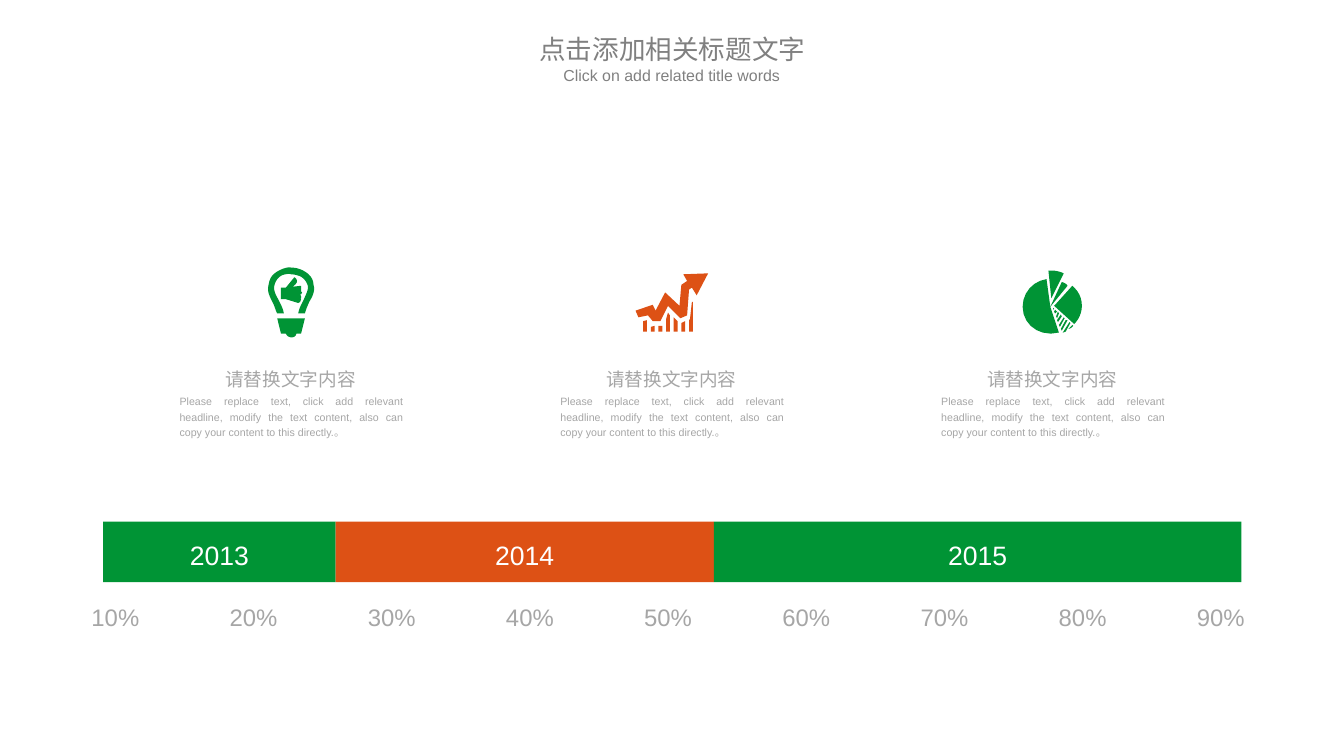
"""Build a timeline slide with three icon captions, a year bar and a percent scale."""
import pptx
import pptx.dml.color
import pptx.enum.shapes
import pptx.enum.text
import pptx.oxml.ns
import pptx.util
import lxml.etree

Pt = pptx.util.Pt
ALIGN = pptx.enum.text.PP_ALIGN
COLOURS = {"green": "009435", "orange": "DD5115", "title": "808080",
           "caption": "A6A6A6", "white": "FFFFFF"}
CJK_FONT = "Noto Sans CJK SC"
ICON_UNIT = 0.72
CURVE_STEPS = 6


def colour(name):
    return pptx.dml.color.RGBColor.from_string(COLOURS[name])


def write(box, text, size, shade, align, font="Arial"):
    para = box.text_frame.paragraphs[0]
    para.alignment = align
    span = para.add_run()
    span.text = text
    span.font.size = Pt(size)
    span.font.name = font
    span.font.color.rgb = colour(shade)
    east_asian = lxml.etree.SubElement(span.font._element, pptx.oxml.ns.qn("a:ea"))
    east_asian.set("typeface", CJK_FONT)
    return para


deck = pptx.Presentation()
deck.slide_width, deck.slide_height = Pt(1012.5), Pt(569.5)
page = deck.slides.add_slide(deck.slide_layouts[6])

for index in range(9):
    box = page.shapes.add_textbox(Pt(61.8 + 104.1 * index), Pt(446.4), Pt(51), Pt(31))
    box.text_frame.word_wrap = False
    box.text_frame.auto_size = pptx.enum.text.MSO_AUTO_SIZE.SHAPE_TO_FIT_TEXT
    write(box, f"{10 * (index + 1)}%", 18, "caption", ALIGN.JUSTIFY).line_spacing = 1.2

bar_left = 77.8
for year, width, shade in [("2013", 175, "green"), ("2014", 285, "orange"),
                           ("2015", 397.5, "green")]:
    bar = page.shapes.add_shape(pptx.enum.shapes.MSO_SHAPE.RECTANGLE,
                                Pt(bar_left), Pt(393), Pt(width), Pt(45.5))
    bar.shadow.inherit = False
    bar.fill.solid()
    bar.fill.fore_color.rgb = colour(shade)
    bar.line.fill.background()
    bar.text_frame.vertical_anchor = pptx.enum.text.MSO_ANCHOR.MIDDLE
    write(bar, year, 20, "white", ALIGN.CENTER).line_spacing = 1.2
    bar_left += width

bulb = [
    [(11, 54), (40, 54), (36, 70), (31, 70), (31, 72, 29, 74, 26, 74),
     (23, 74, 21, 72, 20, 70), (15, 70)],
    [(36, 20), (36, 26), (37, 27), (36, 29), (35, 29), (36, 31), (36, 33), (35, 34),
     (36, 34), (35, 37), (33, 38), (20, 34), (15, 34), (15, 22), (20, 22), (29, 11),
     (35, 15, 30, 19, 27, 21)],
    [(11, 49), (18, 49), (17, 43, 14, 38, 12, 34), (9, 29, 7, 24, 8, 20),
     (9, 15, 12, 11, 16, 9), (19, 8, 22, 7, 26, 8), (29, 8, 32, 9, 35, 10),
     (39, 12, 42, 16, 43, 20), (44, 24, 41, 29, 39, 34), (37, 38, 34, 43, 33, 49),
     (40, 49), (41, 45, 43, 40, 45, 36), (48, 31, 51, 25, 49, 19),
     (49, 12, 44, 7, 38, 4), (34, 2, 30, 1, 26, 1), (22, 0, 17, 2, 13, 4),
     (7, 7, 3, 11, 2, 19), (0, 25, 3, 31, 6, 37), (8, 40, 9, 45, 11, 49)],
]
growth = [
    [(76, 0), (64, 23), (59, 15), (56, 17), (54, 44), (47, 47), (34, 34), (26, 50),
     (18, 50), (13, 44), (3, 46), (0, 39), (18, 33), (21, 39), (31, 20), (46, 34),
     (48, 12), (54, 8), (50, 1)],
    [(8, 61), (12, 61), (12, 49), (8, 50)],
    [(16, 61), (20, 61), (20, 55), (16, 56)],
    [(24, 61), (28, 61), (28, 55), (24, 55)],
    [(32, 61), (36, 61), (36, 44), (34, 41), (32, 48)],
    [(40, 61), (44, 61), (44, 50), (40, 46)],
    [(48, 61), (52, 61), (52, 50), (48, 52)],
    [(56, 61), (60, 61), (60, 30), (59, 30), (57, 48), (56, 49)],
]
pie = [
    [(41, 12), (29, 38), (25, 9), (11, 11, 0, 23, 0, 38), (0, 54, 13, 66, 29, 66),
     (32, 66, 36, 65, 38, 65), (29, 38), (47, 16), (46, 14, 44, 13, 41, 12)],
    [(30, 0), (27, 0), (30, 29), (43, 3), (39, 1, 34, 0, 30, 0)],
    [(52, 16), (58, 21, 62, 28, 62, 37), (62, 44, 59, 51, 54, 56), (33, 37)],
    [(53, 58), (52, 59, 50, 61, 48, 61), (52, 57)],
    [(45, 64), (50, 55), (49, 54), (42, 65)],
    [(41, 63), (47, 52), (45, 52), (40, 61)],
    [(39, 59), (44, 50), (43, 49), (38, 57)],
    [(37, 54), (41, 48), (40, 46), (36, 52)],
    [(36, 50), (38, 45), (37, 43), (35, 48)],
    [(34, 45), (36, 43), (34, 41), (33, 43)],
    [(32, 41), (32, 39), (33, 40)],
]

for left, top, shade, outlines in [(200.9, 200.9, "green", bulb),
                                   (478.8, 205.9, "orange", growth),
                                   (770.4, 203.8, "green", pie)]:
    builder = None
    for outline in outlines:
        points = []
        for step in outline:
            if len(step) == 2:
                points.append(step)
                continue
            corners = [points[-1], step[:2], step[2:4], step[4:]]
            for count in range(1, CURVE_STEPS + 1):
                t = count / CURVE_STEPS
                weights = [(1 - t) ** 3, 3 * t * (1 - t) ** 2, 3 * t * t * (1 - t), t ** 3]
                points.append(tuple(sum(weight * corner[axis] for weight, corner
                                        in zip(weights, corners)) for axis in (0, 1)))
        places = [(Pt(left + x * ICON_UNIT), Pt(top + y * ICON_UNIT)) for x, y in points]
        if builder is None:
            builder = page.shapes.build_freeform(*places[0])
        else:
            builder.move_to(*places[0])
        builder.add_line_segments(places[1:], close=True)
    icon = builder.convert_to_shape()
    icon.shadow.inherit = False
    icon.fill.solid()
    icon.fill.fore_color.rgb = colour(shade)
    icon.line.fill.background()

body = ("Please replace text, click add relevant headline, modify the text content, "
        "also can copy your content to this directly.。")
for index in range(3):
    caption = page.shapes.add_group_shape()
    left = 128.2 + 286.9 * index
    for text, size, inset, top, width, height, wrap in [
            ("请替换文字内容", 14, 34.5, 270, 113.8, 26, False),
            (body, 8, 0, 292.3, 182.9, 42.5, True)]:
        box = caption.shapes.add_textbox(Pt(left + inset), Pt(top), Pt(width), Pt(height))
        box.text_frame.word_wrap = wrap
        box.text_frame.auto_size = pptx.enum.text.MSO_AUTO_SIZE.SHAPE_TO_FIT_TEXT
        write(box, text, size, "caption", ALIGN.JUSTIFY).line_spacing = 1.2

for text, size, font, left, top, width in [
        ("点击添加相关标题文字", 20, CJK_FONT, 385.9, 20.9, 241.2),
        ("Click on add related title words", 12, "Arial", 414.7, 46.1, 182.9)]:
    box = page.shapes.add_textbox(Pt(left), Pt(top), Pt(width), Pt(29.5))
    box.text_frame.word_wrap = True
    para = write(box, text, size, "title", ALIGN.CENTER, font)
    para.space_before = Pt(0.2 * size)
    para.space_after = Pt(6)

deck.save("out.pptx")
